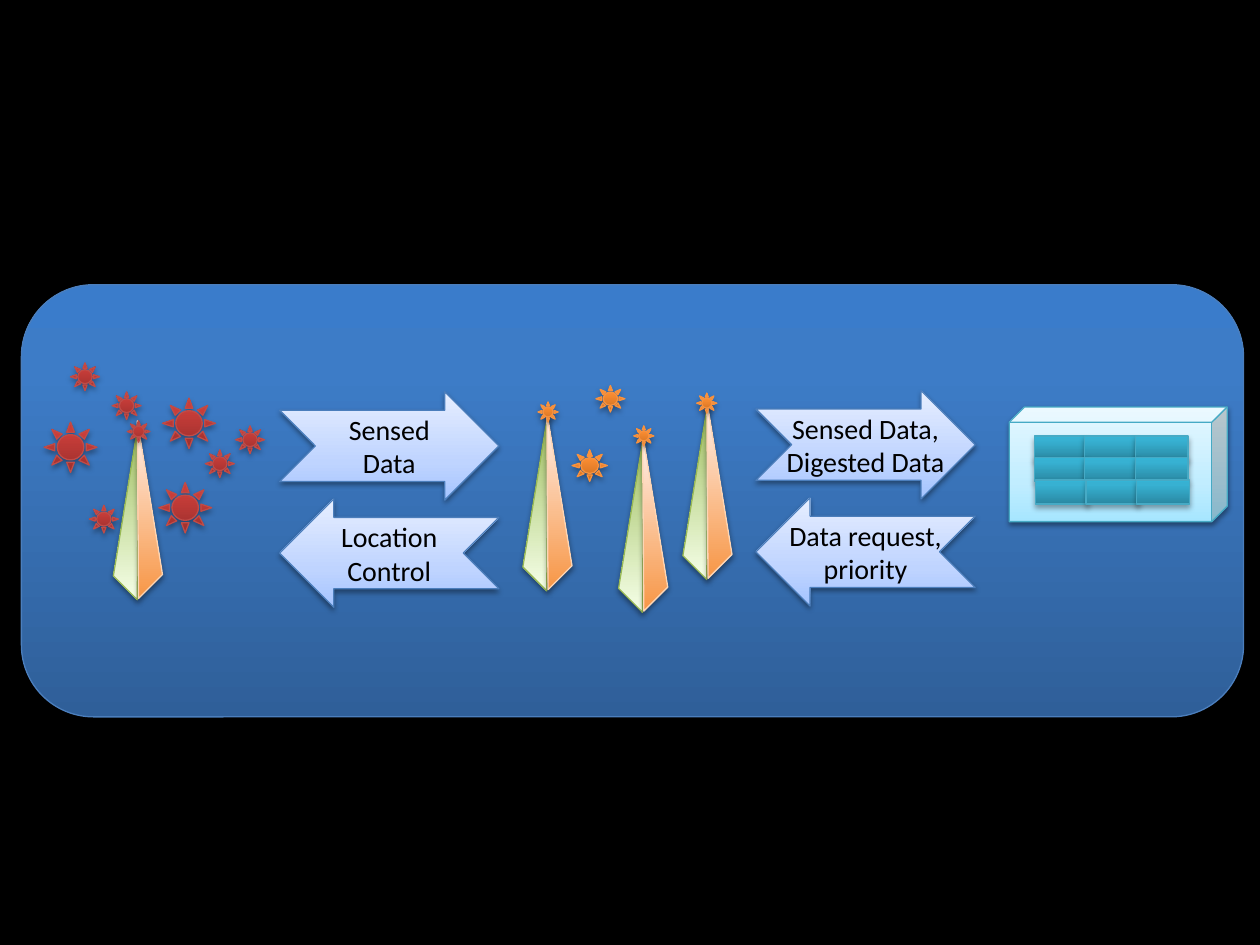
from dataclasses import dataclass
from typing import Any

import lxml.etree
import pptx
import pptx.dml.color
import pptx.enum.shapes
import pptx.enum.text
import pptx.oxml.ns
import pptx.util

Inches = pptx.util.Inches
Shapes = pptx.enum.shapes.MSO_SHAPE
qualified = pptx.oxml.ns.qn


@dataclass(frozen=True)
class Finish:
    stops: tuple[tuple[int, str], ...]
    line: str
    angle: int = 270
    shadow_opacity: int = 38
    shadow_distance: float = 1.6


@dataclass(frozen=True)
class Theme:
    background: str = "000000"
    text: str = "000000"
    shadow: str = "000000"
    font: str = "Calibri"
    text_size: int = 16
    line_width: float = 0.75
    shadow_blur: float = 3.1
    panel: Finish = Finish(((0, "2F5F99"), (80, "3D7CC7"), (100, "3A7CCB")), "4B7EBC", 270, 35, 1.8)
    server: Finish = Finish(((0, "A7E6FF"), (35, "C1EDFF"), (100, "E7F8FF")), "46AAC5")
    cell: Finish = Finish(((0, "2A88A2"), (80, "37B1D2"), (100, "34B4D6")), "46AAC5", 270, 35, 1.8)
    red_sun: Finish = Finish(((0, "9C2F2D"), (80, "CB3E3A"), (100, "CE3B37")), "BF4C48", 270, 35, 1.8)
    orange_sun: Finish = Finish(((0, "CC6E20"), (80, "FF9034"), (100, "FF9136")), "F69240", 270, 35, 1.8)
    arrow: Finish = Finish(((0, "A4C4FF"), (35, "BFD4FF"), (100, "E6EEFF")), "4B7EBC")
    green_side: Finish = Finish(((0, "9BBB59"), (100, "F5FFE7")), "98B955", 90)
    orange_side: Finish = Finish(((0, "F79646"), (100, "FFF2ED")), "FCD5B5")


@dataclass(frozen=True)
class Box:
    left: float
    top: float
    width: float
    height: float


@dataclass(frozen=True)
class Sun:
    box: Box
    finish: Finish


@dataclass(frozen=True)
class Beacon:
    left: float
    top: float
    sun: Sun


@dataclass(frozen=True)
class FlowArrow:
    left: float
    top: float
    lines: tuple[str, ...]
    points_left: bool = False


THEME = Theme()


def color(value: str) -> pptx.dml.color.RGBColor:
    return pptx.dml.color.RGBColor.from_string(value)


def add_color(parent: Any, value: str) -> Any:
    return lxml.etree.SubElement(parent, qualified("a:srgbClr"), val=value)


def apply_finish(shape: Any, finish: Finish) -> None:
    shape.fill.gradient()
    shape.fill.gradient_angle = (360 - finish.angle) % 360
    properties = shape._element.spPr
    stop_list = properties.find(qualified("a:gradFill")).find(qualified("a:gsLst"))
    for stop in list(stop_list):
        stop_list.remove(stop)
    for position, value in finish.stops:
        stop = lxml.etree.SubElement(stop_list, qualified("a:gs"), pos=str(position * 1000))
        add_color(stop, value)
    shape.line.color.rgb = color(finish.line)
    shape.line.width = pptx.util.Pt(THEME.line_width)
    shape.shadow.inherit = False
    shadow = lxml.etree.SubElement(
        properties.find(qualified("a:effectLst")),
        qualified("a:outerShdw"),
        blurRad=str(pptx.util.Pt(THEME.shadow_blur)),
        dist=str(pptx.util.Pt(finish.shadow_distance)),
        dir="5400000",
        rotWithShape="0",
    )
    lxml.etree.SubElement(
        add_color(shadow, THEME.shadow), qualified("a:alpha"), val=str(finish.shadow_opacity * 1000)
    )


def add_preset(shapes: Any, kind: Any, box: Box, finish: Finish) -> Any:
    shape = shapes.add_shape(
        kind, Inches(box.left), Inches(box.top), Inches(box.width), Inches(box.height)
    )
    apply_finish(shape, finish)
    return shape


def add_sun(shapes: Any, sun: Sun) -> None:
    add_preset(shapes, Shapes.SUN, sun.box, sun.finish)


def add_side(shapes: Any, points: list[tuple[float, float]], finish: Finish) -> None:
    corners = [(Inches(x), Inches(y)) for x, y in points]
    builder = shapes.build_freeform(*corners[0])
    builder.add_line_segments(corners[1:], close=True)
    apply_finish(builder.convert_to_shape(), finish)


def add_beacon(slide: Any, beacon: Beacon) -> None:
    shapes = slide.shapes.add_group_shape().shapes
    left, top = beacon.left, beacon.top
    add_side(shapes, [(left + 0.2, top), (left + 0.19, top + 1.41), (left, top + 1.22)], THEME.green_side)
    left, top = left + 0.19, top - 0.01
    add_side(shapes, [(left, top), (left + 0.01, top + 1.41), (left + 0.2, top + 1.22)], THEME.orange_side)
    add_sun(shapes, beacon.sun)


def add_server(slide: Any) -> None:
    shapes = slide.shapes.add_group_shape().shapes
    cube = add_preset(shapes, Shapes.CUBE, Box(8.01, 3.23, 1.73, 0.91), THEME.server)
    cube.adjustments[0] = 0.134
    for left, top in ((8.21, 3.46), (8.21, 3.63), (8.22, 3.81)):
        for column in range(3):
            add_preset(shapes, Shapes.RECTANGLE, Box(left + 0.4 * column, top, 0.42, 0.19), THEME.cell)


def add_flow_arrow(slide: Any, arrow: FlowArrow) -> None:
    box = Box(arrow.left, arrow.top, 1.74, 0.86)
    shape = add_preset(slide.shapes, Shapes.NOTCHED_RIGHT_ARROW, box, THEME.arrow)
    shape.adjustments[0] = 0.658
    shape.adjustments[1] = 0.5
    if arrow.points_left:
        shape._element.spPr.find(qualified("a:xfrm")).set("flipH", "1")
    text_frame = shape.text_frame
    text_frame.text = "\n".join(arrow.lines)
    text_frame.vertical_anchor = pptx.enum.text.MSO_ANCHOR.MIDDLE
    text_frame.word_wrap = len(arrow.lines) == 1
    if not text_frame.word_wrap:
        text_frame.margin_left = text_frame.margin_right = 0
        text_frame.margin_top = text_frame.margin_bottom = 0
    for paragraph in text_frame.paragraphs:
        paragraph.alignment = pptx.enum.text.PP_ALIGN.CENTER
        for run in paragraph.runs:
            run.font.name = THEME.font
            run.font.size = pptx.util.Pt(THEME.text_size)
            run.font.color.rgb = color(THEME.text)


def main() -> None:
    presentation = pptx.Presentation()
    presentation.slide_width = Inches(10)
    presentation.slide_height = Inches(7.5)
    slide = presentation.slides.add_slide(presentation.slide_layouts[6])
    slide.background.fill.solid()
    slide.background.fill.fore_color.rgb = color(THEME.background)

    add_preset(slide.shapes, Shapes.ROUNDED_RECTANGLE, Box(0.17, 2.26, 9.7, 3.43), THEME.panel)
    add_server(slide)

    beacons = [Beacon(0.9, 3.35, Sun(Box(1.01, 3.34, 0.18, 0.17), THEME.red_sun))]
    for left, top, sun_left, sun_top in (
        (4.15, 3.28, 4.27, 3.19), (4.91, 3.45, 5.03, 3.38), (5.42, 3.19, 5.53, 3.12),
    ):
        beacons.append(Beacon(left, top, Sun(Box(sun_left, sun_top, 0.16, 0.16), THEME.orange_sun)))
    for beacon in beacons:
        add_beacon(slide, beacon)

    large_suns = ((1.29, 3.16), (0.35, 3.35), (1.26, 3.83))
    small_suns = ((1.63, 3.57), (0.71, 4.01), (0.89, 3.11), (1.87, 3.38), (0.56, 2.88))
    suns = [Sun(Box(left, top, 0.42, 0.4), THEME.red_sun) for left, top in large_suns]
    suns += [Sun(Box(left, top, 0.23, 0.22), THEME.red_sun) for left, top in small_suns]
    suns += [
        Sun(Box(4.54, 3.57, 0.28, 0.25), THEME.orange_sun),
        Sun(Box(4.73, 3.06, 0.23, 0.21), THEME.orange_sun),
    ]
    for sun in suns:
        add_sun(slide.shapes, sun)

    for arrow in (
        FlowArrow(2.22, 3.11, ("Sensed Data",)),
        FlowArrow(6, 3.1, ("Sensed Data,", "Digested Data")),
        FlowArrow(2.22, 3.96, ("Location Control",), True),
        FlowArrow(6, 3.95, ("Data request,", "priority"), True),
    ):
        add_flow_arrow(slide, arrow)

    presentation.save("out.pptx")


if __name__ == "__main__":
    main()
